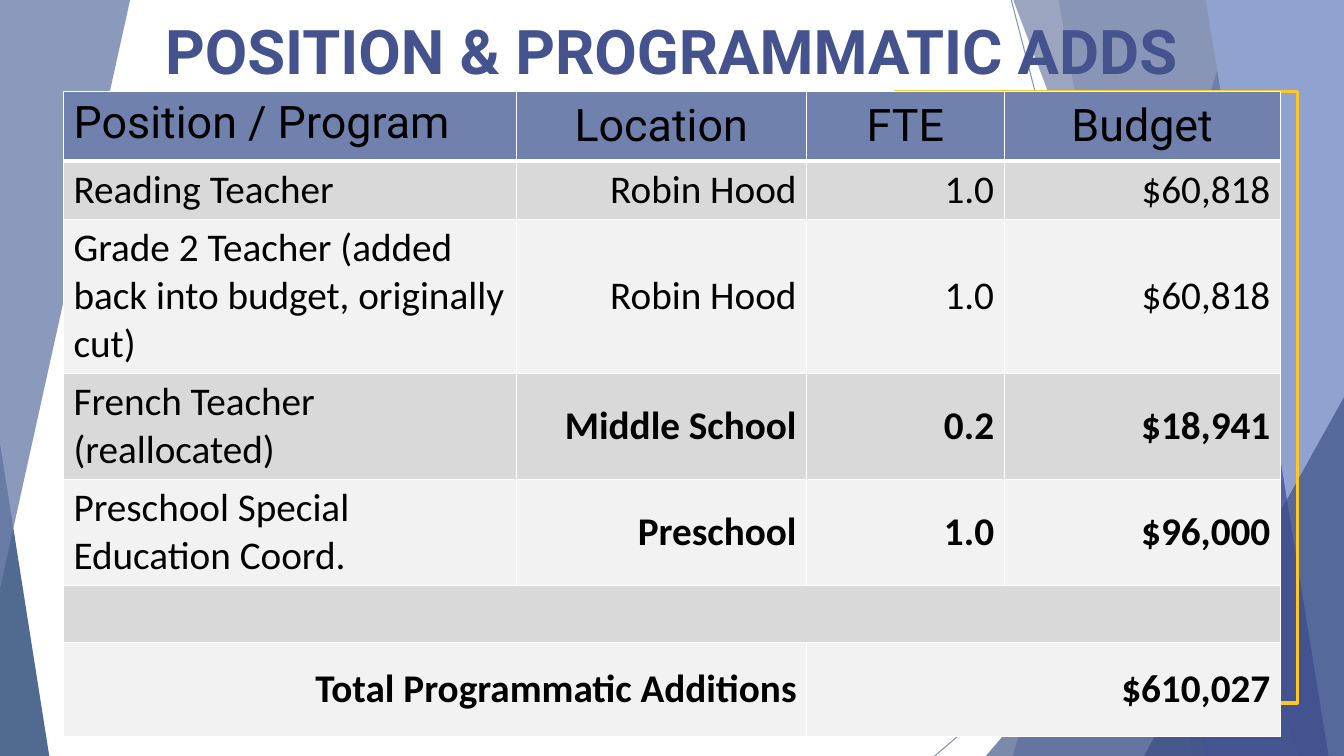
from lxml import etree
from pptx import Presentation
from pptx.dml.color import RGBColor
from pptx.enum.shapes import MSO_CONNECTOR, MSO_SHAPE
from pptx.enum.text import MSO_ANCHOR, PP_ALIGN
from pptx.oxml.ns import qn
from pptx.util import Inches, Pt

COLORS = {
    "blue": "4A66AC", "navy": "384C81", "violet": "5C64B7", "sky": "90A2CF",
    "deep": "072C62", "slate": "6F81AC", "gold": "FFC726", "title": "44528E",
    "white": "FFFFFF", "black": "000000", "dark_band": "D9D9D9", "light_band": "F2F2F2",
}


def paint(fill, color, alpha=100):
    fill.solid()
    fill.fore_color.rgb = RGBColor.from_string(COLORS[color])
    if alpha < 100:
        clr = fill._xPr.find(qn("a:solidFill"))[0]
        etree.SubElement(clr, qn("a:alpha"), val=str(alpha * 1000))


def add_line(start, end, color, width, alpha=100):
    x1, y1, x2, y2 = [Inches(v) for v in start + end]
    line = shapes.add_connector(MSO_CONNECTOR.STRAIGHT, x1, y1, x2, y2)
    line.line.width = Pt(width)
    paint(line.line.fill, color, alpha)
    etree.SubElement(line._element.spPr, qn("a:effectLst"))


prs = Presentation()
prs.slide_width, prs.slide_height = Inches(13.33), Inches(7.5)
s = prs.slides.add_slide(prs.slide_layouts[6])
shapes = s.shapes

add_line((10.03, 0), (11.98, 7.5), "blue", 0.75, 70)
add_line((13.33, 4.04), (9.27, 7.5), "blue", 0.75, 70)

facets = [
    ("band", (12.28, 10.04), "blue", 36),
    ("band", (10.5, 11.83), "blue", 20),
    ("triangle", (9.77, 3.34, 3.56, 4.17, 1), "navy", 66),
    ("band", (10.05, 12.89), "navy", 50),
    ("band", (13.03, 11.92), "violet", 70),
    ("band", (11.96, 13.18), "sky", 100),
    ("triangle", (11.34, 3.94, 1.99, 3.57, 1), "navy", 66),
    ("triangle", (0, 4.4, 0.49, 3.11, 0), "deep", 70),
    ("flipped", (0, 0, 1.29, 5.84, 0), "slate", 80),
]
for kind, geometry, color, alpha in facets:
    if kind == "band":
        top_x, bottom_x = geometry
        outline = shapes.build_freeform(Inches(top_x), 0)
        corners = [(13.33, 0), (13.33, 7.51), (bottom_x, 7.51)]
        outline.add_line_segments([(Inches(x), Inches(y)) for x, y in corners])
        sp = outline.convert_to_shape()
    else:
        sp = shapes.add_shape(MSO_SHAPE.ISOSCELES_TRIANGLE, *[Inches(v) for v in geometry[:4]])
        sp.adjustments[0] = geometry[4]
        if kind == "flipped":
            sp._element.spPr.xfrm.set("flipV", "1")
    sp.shadow.inherit = False
    sp.line.fill.background()
    paint(sp.fill, color, alpha)

add_line((5.83, 6.97), (12.87, 6.97), "gold", 2)
frame = shapes.add_shape(MSO_SHAPE.RECTANGLE, Inches(8.53), Inches(0.91), Inches(4.34), Inches(6.07))
frame.shadow.inherit = False
frame.fill.background()
frame.line.width = Pt(2)
paint(frame.line.fill, "gold")
mask = shapes.add_shape(MSO_SHAPE.RECTANGLE, Inches(8.34), Inches(0.76), Inches(0.53), Inches(6.2))
mask.shadow.inherit = False
mask.line.fill.background()
paint(mask.fill, "white")

rows = [
    ("Position / Program", "Location", "FTE", "Budget"),
    ("Reading Teacher", "Robin Hood", "1.0", "$60,818"),
    ("Grade 2 Teacher (added back into budget, originally cut)", "Robin Hood", "1.0", "$60,818"),
    ("French Teacher (reallocated)", "Middle School", "0.2", "$18,941"),
    ("Preschool Special Education Coord.", "Preschool", "1.0", "$96,000"),
    ("", "", "", ""),
    ("Total Programmatic Additions", "", "$610,027", ""),
]
col_widths = [4.49, 2.88, 1.96, 2.74]
row_heights = [0.69, 0.57, 1.53, 1.05, 1.05, 0.57, 0.93]
total_row = len(rows) - 1
table = shapes.add_table(len(rows), len(col_widths), Inches(0.63), Inches(0.91),
                         Inches(sum(col_widths)), Inches(sum(row_heights))).table
table.first_row = table.horz_banding = False
for column, width in zip(table.columns, col_widths):
    column.width = Inches(width)
for row, height in zip(table.rows, row_heights):
    row.height = Inches(height)

for i, texts in enumerate(rows):
    header = i == 0
    for j, text in enumerate(texts):
        cell = table.cell(i, j)
        tcPr = cell._tc.get_or_add_tcPr()
        for side in "LRTB":
            width = 3 if header and side == "B" else 1
            ln = etree.SubElement(tcPr, qn("a:ln" + side), w=str(Pt(width)))
            ln_fill = etree.SubElement(ln, qn("a:solidFill"))
            etree.SubElement(ln_fill, qn("a:srgbClr"), val=COLORS["white"])
        paint(cell.fill, "slate" if header else "dark_band" if i % 2 else "light_band")
        if not text:
            continue
        cell.vertical_anchor = MSO_ANCHOR.TOP if header and j == 0 else MSO_ANCHOR.MIDDLE
        cell.text_frame.text = text
        p = cell.text_frame.paragraphs[0]
        if j == 0 and i < total_row:
            p.alignment = PP_ALIGN.LEFT
        else:
            p.alignment = PP_ALIGN.CENTER if header else PP_ALIGN.RIGHT
        font = p.runs[0].font
        font.name = "Roboto" if header else "Calibri"
        font.size = Pt(32 if header else 28)
        font.bold = i == total_row or (i >= 3 and j > 0)
        paint(font.fill, "black")

table.cell(5, 0).merge(table.cell(5, 3))
table.cell(6, 0).merge(table.cell(6, 1))
table.cell(6, 2).merge(table.cell(6, 3))

title = shapes.add_textbox(Inches(0.2), Inches(-0.24), Inches(12.93), Inches(2.02))
tf = title.text_frame
tf.word_wrap = True
tf.vertical_anchor = MSO_ANCHOR.BOTTOM
tf.margin_bottom = Inches(0.92)
tf.text = "POSITION & PROGRAMMATIC ADDS"
p = tf.paragraphs[0]
p.alignment = PP_ALIGN.CENTER
r = p.runs[0]
r.font.name = "Roboto"
r.font.size = Pt(44)
r.font.bold = True
paint(r.font.fill, "title")

prs.save("out.pptx")
